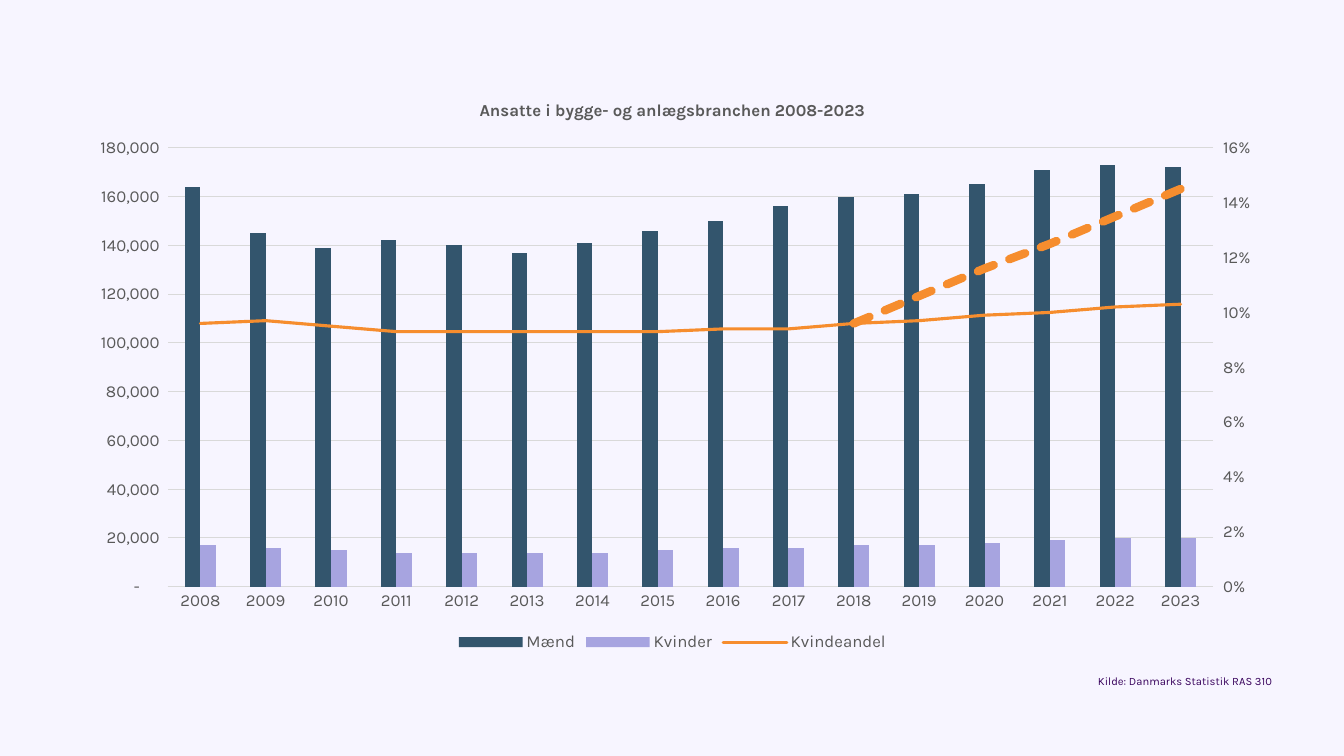
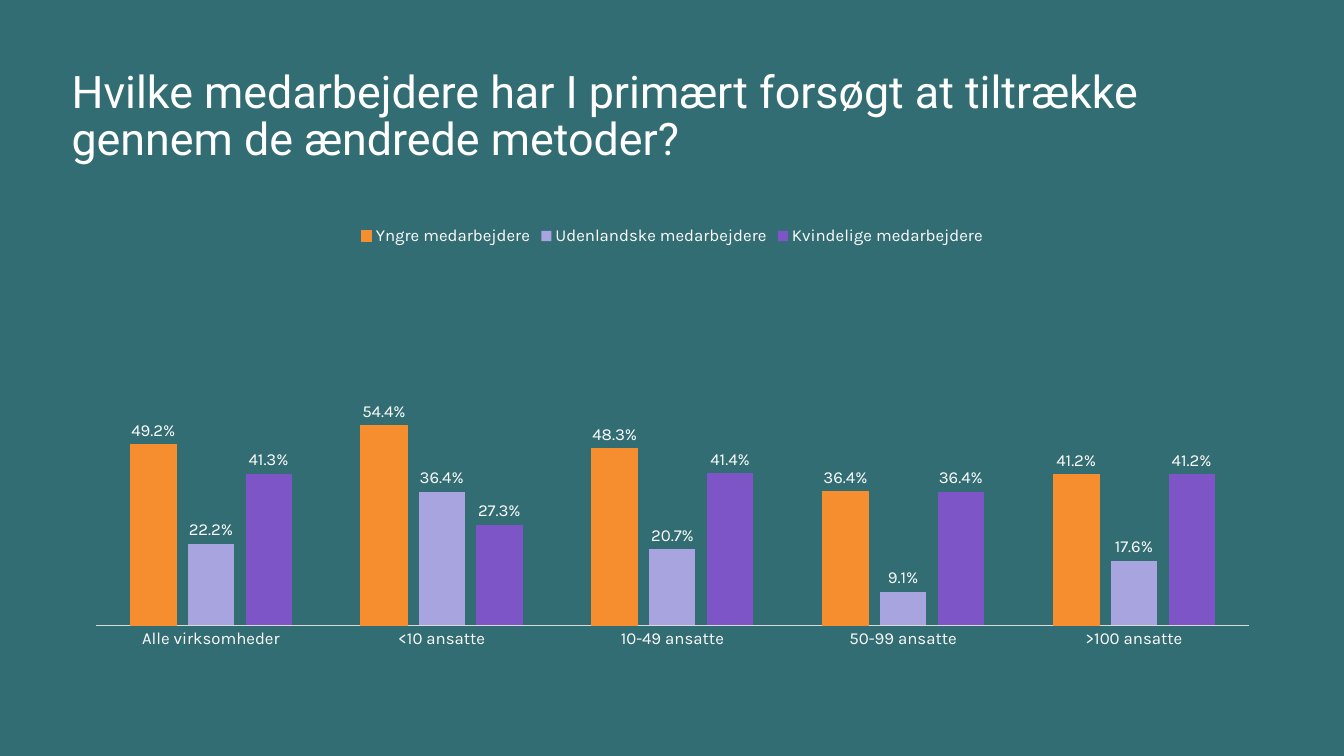
from copy import deepcopy

from pptx import Presentation
from pptx.chart.axis import CategoryAxis, ValueAxis
from pptx.chart.data import CategoryChartData
from pptx.dml.color import RGBColor
from pptx.enum.chart import XL_CHART_TYPE as Kind, XL_LABEL_POSITION as Spot
from pptx.enum.chart import XL_LEGEND_POSITION as Side, XL_TICK_MARK as Tick
from pptx.enum.dml import MSO_LINE as Dash
from pptx.enum.text import MSO_ANCHOR as Anchor, PP_ALIGN as Align
from pptx.oxml import parse_xml
from pptx.oxml.ns import nsdecls, qn
from pptx.util import Inches, Pt

HUES = {
    "pale": "F7F5FF", "teal": "336D74", "white": "FFFFFF", "plum": "38025C",
    "grey": "595959", "rule": "D9D9D9", "navy": "33556D", "lilac": "A7A4E0",
    "orange": "F68D2E", "violet": "7D55C7",
}
RGB = {name: RGBColor.from_string(code) for name, code in HUES.items()}
LEFT, WIDE = 0.71, 11.92
BODY, HEAD = "Karla", "Roboto"


def add_text(slide, text, box, size, hue, face=BODY, align=Align.LEFT,
             anchor=Anchor.TOP, lead=1.0, after=0):
    frame = slide.shapes.add_textbox(*map(Inches, box)).text_frame
    frame.word_wrap = True
    frame.vertical_anchor = anchor
    frame.margin_left = frame.margin_right = 0
    frame.margin_top = frame.margin_bottom = 0
    para = frame.paragraphs[0]
    para.text = text
    para.alignment, para.line_spacing = align, lead
    para.space_after = Pt(after)
    font = para.font
    font.name, font.size, font.color.rgb = face, Pt(size), RGB[hue]


def add_bars(slide, box, cats, rows, ink, side, inner, gap):
    """Add clustered columns; rows are (name, hue, values), inner is the plot area in shares of the chart."""
    data = CategoryChartData()
    data.categories = cats
    for name, _, vals in rows:
        data.add_series(name, vals)
    chart = slide.shapes.add_chart(Kind.COLUMN_CLUSTERED, *map(Inches, box), data).chart
    chart.has_title = False
    chart.has_legend = True
    key = chart.legend
    key.position, key.include_in_layout = side, False
    cat, val = chart.category_axis, chart.value_axis
    for font in (chart.font, key.font, cat.tick_labels.font, val.tick_labels.font):
        font.name, font.size, font.color.rgb = BODY, Pt(12), RGB[ink]
    cat.major_tick_mark = val.major_tick_mark = Tick.NONE
    line = cat.format.line
    line.color.rgb, line.width = RGB["rule"], Pt(0.75)
    val.format.line.fill.background()
    val.minimum_scale = 0
    plot = chart.plots[0]
    plot.gap_width, plot.vary_by_categories = gap, False
    for ser, (_, hue, _) in zip(plot.series, rows):
        ser.invert_if_negative = False
        ser.format.fill.solid()
        ser.format.fill.fore_color.rgb = RGB[hue]
    area = chart._chartSpace.find(".//" + qn("c:plotArea"))
    for old in area.findall(qn("c:layout")):
        area.remove(old)
    sizes = "".join(f'<c:{tag} val="{num}"/>' for tag, num in zip("xywh", inner))
    area.insert(0, parse_xml(
        f'<c:layout {nsdecls("c")}><c:manualLayout><c:layoutTarget val="inner"/>'
        f'<c:xMode val="edge"/><c:yMode val="edge"/>{sizes}</c:manualLayout></c:layout>'))
    return chart


deck = Presentation()
deck.slide_width, deck.slide_height = Inches(13.33), Inches(7.5)
slides = []
for hue in ("pale", "teal"):
    slide = deck.slides.add_slide(deck.slide_layouts[6])
    slide.background.fill.solid()
    slide.background.fill.fore_color.rgb = RGB[hue]
    slides.append(slide)
staff, reach = slides

# Slide 1: employees and the share of women
men = [164, 145, 139, 142, 140, 137, 141, 146, 150, 156, 160, 161, 165, 171, 173, 172]
women = [17, 16, 15, 14, 14, 14, 14, 15, 16, 16, 17, 17, 18, 19, 20, 20]
share = [0.096, 0.097, 0.095, 0.093, 0.093, 0.093, 0.093, 0.093,
         0.094, 0.094, 0.096, 0.097, 0.099, 0.1, 0.102, 0.103]
goal = [None] * 10 + [0.096, 0.106, 0.116, 0.125, 0.135, 0.145]
chart = add_bars(
    staff, (LEFT, 0.78, WIDE, 5.73), [str(year) for year in range(2008, 2024)],
    [("Mænd", "navy", [num * 1000 for num in men]),
     ("Kvinder", "lilac", [num * 1000 for num in women]),
     ("Kvindeandel", "orange", share),
     ("Series 4", "orange", goal)],
    "grey", Side.BOTTOM, (0.08, 0.12, 0.87, 0.76), 219)
chart.has_title = True
title = chart.chart_title.text_frame
title.text = "Ansatte i bygge- og anlægsbranchen 2008-2023"
font = title.paragraphs[0].font
font.name, font.size, font.bold, font.color.rgb = BODY, Pt(12), True, RGB["grey"]

val = chart.value_axis
val.maximum_scale, val.major_unit = 180000, 20000
val.tick_labels.number_format = '_ * #,##0_ ;_ * \\-#,##0_ ;_ * "-"??_ ;_ '
val.tick_labels.number_format_is_linked = False
grid = val.major_gridlines.format.line
grid.color.rgb, grid.width = RGB["rule"], Pt(0.75)

# Share and goal become lines on a second axis
lines = parse_xml(
    f'<c:lineChart {nsdecls("c")}><c:grouping val="standard"/><c:varyColors val="0"/>'
    '<c:marker val="1"/><c:axId val="501"/><c:axId val="502"/></c:lineChart>')
bars = chart._chartSpace.find(".//" + qn("c:barChart"))
for ser, wide in zip(list(chart.plots[0].series)[2:], (2.25, 6)):
    line = ser.format.line
    line.color.rgb, line.width = RGB["orange"], Pt(wide)
    if wide == 6:
        line.dash_style = Dash.SQUARE_DOT
    node = ser._element
    node.find(qn("c:spPr")).find(qn("a:ln")).set("cap", "rnd")
    node.remove(node.find(qn("c:invertIfNegative")))
    node.find(qn("c:spPr")).addnext(parse_xml(
        f'<c:marker {nsdecls("c")}><c:symbol val="none"/></c:marker>'))
    node.append(parse_xml(f'<c:smooth {nsdecls("c")} val="0"/>'))
    lines.find(qn("c:marker")).addprevious(node)
bars.addnext(lines)

base, main = chart.category_axis._element, val._element
low, right = deepcopy(base), deepcopy(main)
main.addnext(right)
right.addnext(low)
for node, own, other in ((low, "501", "502"), (right, "502", "501")):
    node.find(qn("c:axId")).set("val", own)
    node.find(qn("c:crossAx")).set("val", other)
right.find(qn("c:axPos")).set("val", "r")
right.find(qn("c:crosses")).set("val", "max")
CategoryAxis(low).visible = False
rate = ValueAxis(right)
rate.has_major_gridlines = False
rate.major_tick_mark = Tick.OUTSIDE
rate.maximum_scale, rate.major_unit = 0.16, 0.02
rate.tick_labels.number_format = "0%"
chart.legend._element.find(qn("c:legendPos")).addnext(parse_xml(
    f'<c:legendEntry {nsdecls("c")}><c:idx val="3"/><c:delete val="1"/></c:legendEntry>'))

add_text(staff, "Kilde: Danmarks Statistik RAS 310", (5.79, 6.51, 6.83, 0.32), 8, "plum",
         align=Align.RIGHT, anchor=Anchor.BOTTOM, lead=0.93, after=3)

# Slide 2: groups the firms tried to attract
add_text(reach, "Hvilke medarbejdere har I primært forsøgt at tiltrække gennem de ændrede metoder?",
         (LEFT, 0.71, WIDE, 1.42), 32, "white", face=HEAD, lead=0.87)
chart = add_bars(
    reach, (LEFT, 2.13, WIDE, 4.38),
    ["Alle virksomheder", "<10 ansatte", "10-49 ansatte", "50-99 ansatte", ">100 ansatte"],
    [("Yngre medarbejdere", "orange", [0.492, 0.544, 0.483, 0.364, 0.412]),
     ("Udenlandske medarbejdere", "lilac", [0.222, 0.364, 0.207, 0.091, 0.176]),
     ("Kvindelige medarbejdere", "violet", [0.413, 0.273, 0.414, 0.364, 0.412])],
    "white", Side.TOP, (0.02, 0.1, 0.96, 0.83), 150)
val = chart.value_axis
val.maximum_scale = 1
val.has_major_gridlines = val.visible = False
plot = chart.plots[0]
plot.overlap = -25
line = plot.series[0].format.line
line.color.rgb, line.width = RGB["orange"], Pt(0.75)
plot.has_data_labels = True
tags = plot.data_labels
tags.show_value, tags.position = True, Spot.OUTSIDE_END
tags.number_format, tags.number_format_is_linked = "0.0%", False
tags.font.name, tags.font.size, tags.font.color.rgb = BODY, Pt(12), RGB["white"]

deck.save("out.pptx")
